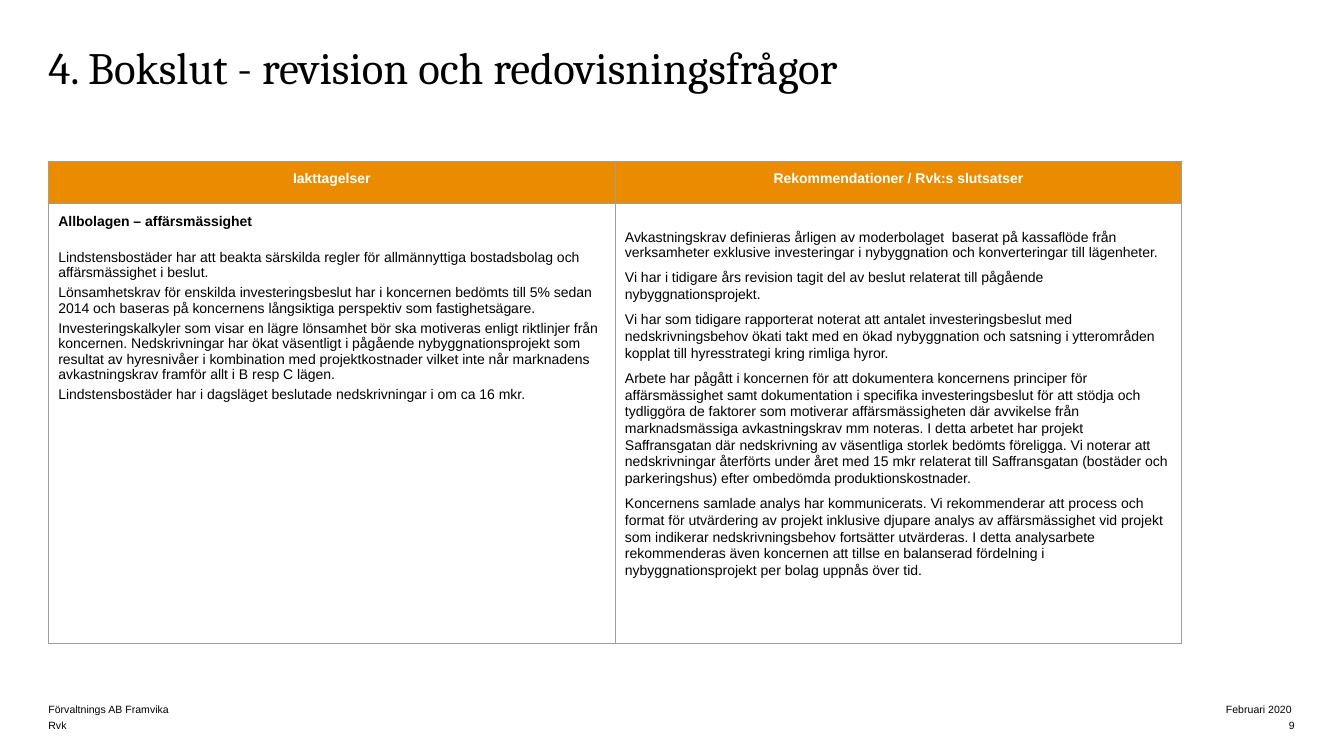
import pptx
import pptx.dml.color
import pptx.enum.text
import pptx.oxml
import pptx.oxml.ns
import pptx.util
from pptx.util import Cm

BLACK = pptx.dml.color.RGBColor(0x00, 0x00, 0x00)
WHITE = pptx.dml.color.RGBColor(0xFF, 0xFF, 0xFF)
ORANGE = pptx.dml.color.RGBColor(0xEB, 0x8C, 0x00)
GREY = pptx.dml.color.RGBColor(0x9E, 0x9E, 0x9E)

ALIGN = pptx.enum.text.PP_ALIGN
ANCHOR = pptx.enum.text.MSO_ANCHOR

LEFT = Cm(1.22)
CELL_MARGIN = Cm(0.25)
BLANK_LINE = 11.5

HEADINGS = ["Iakttagelser", "Rekommendationer / Rvk:s slutsatser"]
OBSERVATION_TITLE = "Allbolagen – affärsmässighet"
OBSERVATIONS = [
    "Lindstensbostäder har att beakta särskilda regler för allmännyttiga "
    "bostadsbolag och affärsmässighet i beslut.",
    "Lönsamhetskrav för enskilda investeringsbeslut har i koncernen bedömts "
    "till 5% sedan 2014 och baseras på koncernens långsiktiga perspektiv som "
    "fastighetsägare.",
    "Investeringskalkyler som visar en lägre lönsamhet bör ska motiveras enligt "
    "riktlinjer från koncernen. Nedskrivningar har ökat väsentligt i pågående "
    "nybyggnationsprojekt som resultat av hyresnivåer i kombination med "
    "projektkostnader vilket inte når marknadens avkastningskrav framför allt i "
    "B resp C lägen.",
    "Lindstensbostäder har i dagsläget beslutade nedskrivningar i om ca 16 mkr.",
]
FIRST_CONCLUSION = (
    "Avkastningskrav definieras årligen av moderbolaget  baserat på kassaflöde "
    "från verksamheter exklusive investeringar i nybyggnation och "
    "konverteringar till lägenheter."
)
CONCLUSIONS = [
    "Vi har i tidigare års revision tagit del av beslut relaterat till pågående "
    "nybyggnationsprojekt.",
    "Vi har som tidigare rapporterat noterat att antalet investeringsbeslut med "
    "nedskrivningsbehov ökati takt med en ökad nybyggnation och satsning i "
    "ytterområden kopplat till hyresstrategi kring rimliga hyror.",
    "Arbete har pågått i koncernen för att dokumentera koncernens principer för "
    "affärsmässighet samt dokumentation i specifika investeringsbeslut för att "
    "stödja och tydliggöra de faktorer som motiverar affärsmässigheten där "
    "avvikelse från marknadsmässiga avkastningskrav mm noteras. I detta arbetet "
    "har projekt Saffransgatan där nedskrivning av väsentliga storlek bedömts "
    "föreligga. Vi noterar att nedskrivningar återförts under året med 15 mkr "
    "relaterat till Saffransgatan (bostäder och parkeringshus) efter ombedömda "
    "produktionskostnader.",
    "Koncernens samlade analys har kommunicerats. Vi rekommenderar att process "
    "och format för utvärdering av projekt inklusive djupare analys av "
    "affärsmässighet vid projekt som indikerar nedskrivningsbehov fortsätter "
    "utvärderas. I detta analysarbete rekommenderas även koncernen att tillse en "
    "balanserad fördelning i nybyggnationsprojekt per bolag uppnås över tid.",
]


def write(frame, text, size=10, font="Arial", color=BLACK, bold=False,
          align=ALIGN.LEFT, before=0, after=0, spacing=1.0):
    """Fill the first paragraph if it is empty, otherwise add one."""
    para = frame.paragraphs[0]
    if para.runs:
        para = frame.add_paragraph()
    para.alignment = align
    para.space_before = pptx.util.Pt(before)
    para.space_after = pptx.util.Pt(after)
    para.line_spacing = spacing
    span = para.add_run()
    span.text = text
    span.font.size = pptx.util.Pt(size)
    span.font.name = font
    span.font.bold = bold
    span.font.color.rgb = color


def prepare_frame(frame, anchor):
    frame.margin_left = frame.margin_right = 0
    frame.margin_top = frame.margin_bottom = 0
    frame.word_wrap = True
    frame.auto_size = pptx.enum.text.MSO_AUTO_SIZE.NONE
    frame.vertical_anchor = anchor


def add_title(page, text):
    title = page.shapes.title
    title.left, title.top = LEFT, Cm(1.2)
    title.width, title.height = Cm(31.4), Cm(1.86)
    prepare_frame(title.text_frame, ANCHOR.TOP)
    write(title.text_frame, text, size=32, font="Cambria", spacing=0.85)


def add_footer(page, text, left, top, width, align):
    box = page.shapes.add_textbox(left, top, width, Cm(0.39))
    prepare_frame(box.text_frame, ANCHOR.BOTTOM)
    write(box.text_frame, text, size=7.5, align=align)


def set_borders(cell):
    properties = cell._tc.get_or_add_tcPr()
    for position, side in enumerate(("lnL", "lnR", "lnT", "lnB")):
        properties.insert(position, pptx.oxml.parse_xml(
            f'<a:{side} {pptx.oxml.ns.nsdecls("a")} w="9525"><a:solidFill>'
            f'<a:srgbClr val="{GREY}"/></a:solidFill></a:{side}>'))


def add_findings_table(page):
    frame = page.shapes.add_table(2, 2, LEFT, Cm(4.06), Cm(28.56), Cm(12.15))
    table = frame.table
    table.first_row = table.horz_banding = False
    table.rows[0].height, table.rows[1].height = Cm(1.07), Cm(11.08)
    for column in table.columns:
        column.width = Cm(14.28)
    for cell in table.iter_cells():
        cell.margin_left = cell.margin_right = CELL_MARGIN
        cell.margin_top = cell.margin_bottom = CELL_MARGIN
        cell.fill.background()
        set_borders(cell)

    # Heading row
    for cell, heading in zip(table.rows[0].cells, HEADINGS):
        cell.fill.solid()
        cell.fill.fore_color.rgb = ORANGE
        write(cell.text_frame, heading, color=WHITE, bold=True,
              align=ALIGN.CENTER, before=3, after=3)

    # Observations
    observed, concluded = table.rows[1].cells
    write(observed.text_frame, OBSERVATION_TITLE, bold=True, before=3,
          after=BLANK_LINE)
    for text in OBSERVATIONS:
        write(observed.text_frame, text, before=3)

    # Conclusions start one line lower
    concluded.margin_top = CELL_MARGIN + pptx.util.Pt(BLANK_LINE)
    write(concluded.text_frame, FIRST_CONCLUSION, before=3)
    for text in CONCLUSIONS:
        write(concluded.text_frame, text, before=6, spacing=1.07)


def main():
    deck = pptx.Presentation()
    deck.slide_width, deck.slide_height = Cm(33.87), Cm(19.05)
    page = deck.slides.add_slide(deck.slide_layouts[5])

    add_title(page, "4. Bokslut - revision och redovisningsfrågor")
    add_findings_table(page)

    # Footer: two lines, each with a left and a right part
    footers = [("Förvaltnings AB Framvika", "Februari 2020 "), ("Rvk", "9")]
    for line, (left_text, right_text) in enumerate(footers):
        top = Cm(17.65) + line * Cm(0.39)
        add_footer(page, left_text, LEFT, top, Cm(15.2), ALIGN.LEFT)
        add_footer(page, right_text, Cm(22.83), top, Cm(9.8), ALIGN.RIGHT)

    deck.save("out.pptx")


if __name__ == "__main__":
    main()
